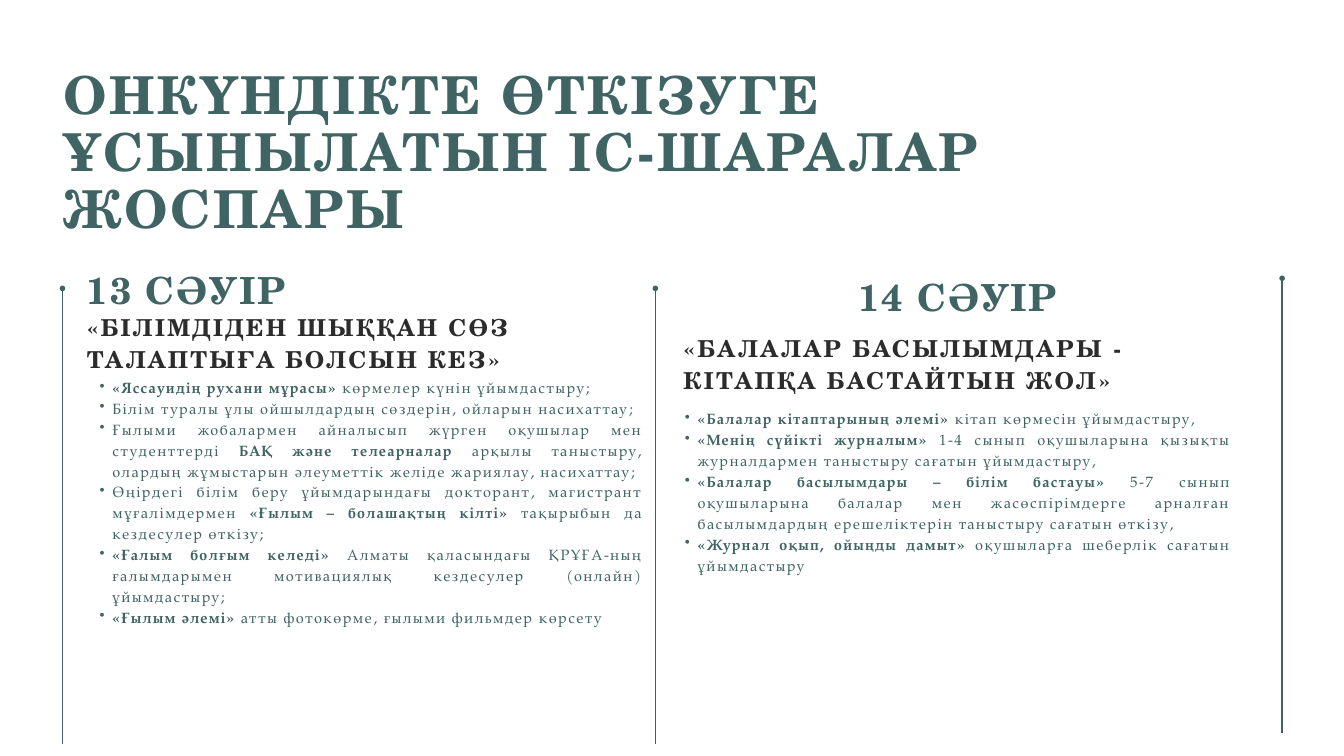
from lxml import etree
from pptx import Presentation
from pptx import util as u
from pptx.dml.color import RGBColor
from pptx.enum import shapes, text
from pptx.oxml.ns import qn

COLOURS = {"teal": "3F6463", "ink": "2C2C2C"}
SERIF, BODY = "TeX Gyre Schola", "TeX Gyre Pagella"

# Text formats: sizes, line heights and letter spacing in points
TITLE = dict(font=SERIF, size=56, colour="teal", leading=61, spacing=2.8, bold=True)
DATE = dict(TITLE, size=40, leading=43.6, spacing=2)
THEME = dict(TITLE, size=25, colour="ink", leading=33.6, spacing=2.4)
THEME_LOOSE = dict(THEME, leading=35, spacing=2.5)
LIST = dict(font=BODY, size=16, colour="teal", leading=22.4, spacing=1.6, bold=False)

# Bold passages stand between double asterisks
FIRST_DAY = [
    "**«Яссауидің рухани мұрасы» **көрмелер күнін ұйымдастыру;",
    "Білім туралы ұлы ойшылдардың сөздерін, ойларын насихаттау;",
    "Ғылыми жобалармен айналысып жүрген оқушылар мен студенттерді "
    "**БАҚ және телеарналар **арқылы таныстыру, олардың жұмыстарын "
    "әлеуметтік желіде жариялау, насихаттау;",
    "Өңірдегі білім беру ұйымдарындағы докторант, магистрант мұғалімдермен "
    "**«Ғылым – болашақтың кілті» **тақырыбын да кездесулер өткізу;",
    "**«Ғалым болғым келеді» **Алматы қаласындағы ҚРҰҒА-ның ғалымдарымен "
    "мотивациялық кездесулер (онлайн) ұйымдастыру;",
    "**«Ғылым әлемі» **атты фотокөрме, ғылыми фильмдер көрсету",
]
SECOND_DAY = [
    "**«Балалар кітаптарының әлемі» **кітап көрмесін ұйымдастыру,",
    "**«Менің сүйікті журналым»** 1-4 сынып оқушыларына қызықты "
    "журналдармен таныстыру сағатын ұйымдастыру,",
    "**«Балалар басылымдары – білім бастауы»** 5-7 сынып оқушыларына балалар "
    "мен жасөспірімдерге арналған басылымдардың ерешеліктерін таныстыру "
    "сағатын өткізу,",
    "**«Журнал оқып, ойыңды дамыт» **оқушыларға шеберлік сағатын ұйымдастыру",
]


class Page:
    """Holds the style and the current slide."""

    def __init__(self, deck):
        self.page = deck.slides.add_slide(deck.slide_layouts[5])

    def colour(self, name):
        return RGBColor.from_string(COLOURS[name])

    def fill_frame(self, frame, paragraphs, style, bullets=False):
        settings = dict(word_wrap=True, auto_size=text.MSO_AUTO_SIZE.NONE,
                        vertical_anchor=text.MSO_ANCHOR.TOP,
                        margin_left=0, margin_top=0, margin_right=0, margin_bottom=0)
        for name, value in settings.items():
            setattr(frame, name, value)
        for number, content in enumerate(paragraphs):
            para = frame.add_paragraph() if number else frame.paragraphs[0]
            para.alignment = text.PP_ALIGN.JUSTIFY if bullets else text.PP_ALIGN.LEFT
            para.line_spacing = u.Pt(style["leading"])
            if bullets:
                self.add_bullet(para)
            for index, passage in enumerate(content.split("**")):
                if passage:
                    self.add_span(para, passage, style, style["bold"] or index % 2 == 1)

    def add_bullet(self, para):
        para.level = 1
        properties = para._p.get_or_add_pPr()
        properties.set("marL", str(u.Cm(0.97)))
        properties.set("indent", str(u.Cm(-0.48)))
        etree.SubElement(properties, qn("a:buChar")).set("char", "•")

    def add_span(self, para, passage, style, bold):
        span = para.add_run()
        span.text = passage
        formats = dict(name=style["font"], size=u.Pt(style["size"]), bold=bold)
        for name, value in formats.items():
            setattr(span.font, name, value)
        span.font.color.rgb = self.colour(style["colour"])
        span._r.get_or_add_rPr().set("spc", str(round(style["spacing"] * 100)))

    def title(self, content, left, top, width, height):
        box = self.page.shapes.title
        places = dict(left=left, top=top, width=width, height=height)
        for name, value in places.items():
            setattr(box, name, u.Cm(value))
        self.fill_frame(box.text_frame, [content], TITLE)

    def text_box(self, paragraphs, style, left, top, width, height, bullets=False):
        box = self.page.shapes.add_textbox(*map(u.Cm, (left, top, width, height)))
        self.fill_frame(box.text_frame, paragraphs, style, bullets)

    def pin(self, x, bottom, top):
        """Vertical line with a round head at its upper end."""
        line = self.page.shapes.add_connector(
            shapes.MSO_CONNECTOR.STRAIGHT, *map(u.Cm, (x, bottom, x, top)))
        line.line.width = u.Pt(1.5)
        line.line.color.rgb = self.colour("teal")
        etree.SubElement(line.line._get_or_add_ln(), qn("a:tailEnd")).set("type", "oval")
        etree.SubElement(line._element.spPr, qn("a:effectLst"))


def main():
    deck = Presentation()
    deck.slide_width, deck.slide_height = u.Cm(50.8), u.Cm(28.58)
    page = Page(deck)

    # Title
    page.title("ОНКҮНДІКТЕ ӨТКІЗУГЕ ҰСЫНЫЛАТЫН ІС-ШАРАЛАР ЖОСПАРЫ",
               2.39, 2.57, 46.08, 4.32)

    # Column lines
    for x, bottom, top in [(2.36, 28.12, 10.9), (24.77, 28.12, 10.9),
                           (48.46, 27.71, 10.52)]:
        page.pin(x, bottom, top)

    # First day
    page.text_box(["13 СӘУІР"], DATE, 3.28, 10.24, 13.06, 1.55)
    page.text_box(["«БІЛІМДІДЕН ШЫҚҚАН СӨЗ ТАЛАПТЫҒА БОЛСЫН КЕЗ»"], THEME,
                  3.28, 11.73, 20.85, 2.41)
    page.text_box(FIRST_DAY, LIST, 3.28, 14.2, 21.03, 10.97, bullets=True)

    # Second day
    page.text_box(["14 СӘУІР"], DATE, 32.44, 10.52, 8, 1.55)
    page.text_box(["«БАЛАЛАР БАСЫЛЫМДАРЫ - КІТАПҚА БАСТАЙТЫН ЖОЛ»"], THEME_LOOSE,
                  25.83, 12.45, 21.13, 2.41)
    page.text_box(SECOND_DAY, LIST, 25.4, 15.39, 21.13, 7.06, bullets=True)

    deck.save("out.pptx")


if __name__ == "__main__":
    main()
